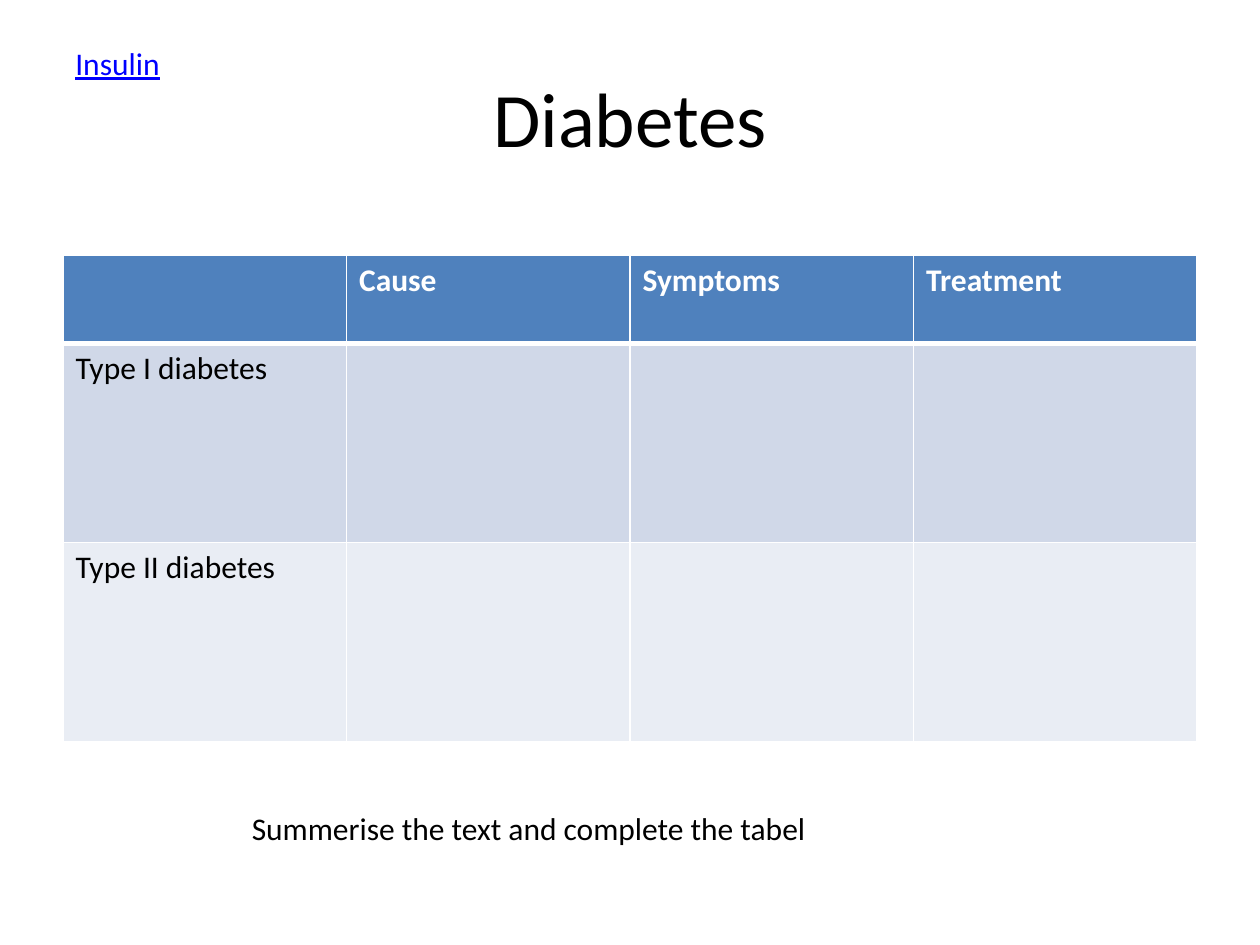
from pptx import Presentation as Deck
from pptx.dml.color import RGBColor as Rgb
from pptx.enum.text import MSO_ANCHOR as Anchor, PP_ALIGN as Align
from pptx.oxml import parse_xml
from pptx.oxml.ns import nsdecls
from pptx.util import Inches, Pt

WIDE, HIGH = Inches(10), Inches(7.5)
EDGE, SPAN = 0.05, 0.9
INK = {"text": "000000", "link": "0000FF", "line": "FFFFFF",
       "head": "4F81BD", "odd": "D0D8E8", "even": "E9EDF4"}
ROWS = [("head", 0.7, ["", "Cause", "Symptoms", "Treatment"]),
        ("odd", 1.58, ["Type I diabetes", "", "", ""]),
        ("even", 1.58, ["Type II diabetes", "", "", ""])]


def area(left, top, width, height):
    """Turn shares of the slide into lengths."""
    return (int(left * WIDE), int(top * HIGH),
            int(width * WIDE), int(height * HIGH))


def write(frame, text, size=18, ink="text", bold=False, line=False):
    """Add one styled run to the first paragraph."""
    run = frame.paragraphs[0].add_run()
    run.text = text
    font = run.font
    font.name, font.size = "Calibri", Pt(size)
    font.bold, font.underline = bold, line
    font.color.rgb = Rgb.from_string(INK[ink])


def add_title(slide, text):
    """Place the slide title."""
    title = slide.shapes.title
    title.left, title.top, title.width, title.height = area(
        EDGE, 0.04, SPAN, 1 / 6)
    frame = title.text_frame
    frame.vertical_anchor = Anchor.MIDDLE
    frame.paragraphs[0].alignment = Align.CENTER
    write(frame, text, 44)


def add_note(slide, text, box, wrap=True, **style):
    """Add a one-line text box."""
    frame = slide.shapes.add_textbox(*area(*box)).text_frame
    frame.word_wrap = wrap
    write(frame, text, **style)


def edge(cell, top, base):
    """Draw the four borders of a cell."""
    sides = {"L": 1, "R": 1, "T": top, "B": base}
    for spot, (side, width) in enumerate(sides.items()):
        rule = parse_xml(
            f'<a:ln{side} {nsdecls("a")} w="{Pt(width)}"><a:solidFill>'
            f'<a:srgbClr val="{INK["line"]}"/></a:solidFill></a:ln{side}>')
        cell._tc.get_or_add_tcPr().insert(spot, rule)


def add_grid(slide):
    """Add the table to fill in."""
    count = len(ROWS[0][2])
    tall = sum(high for _, high, _ in ROWS) / 7.5
    grid = slide.shapes.add_table(
        len(ROWS), count, *area(EDGE, 0.27, SPAN, tall)).table
    for r, (kind, high, texts) in enumerate(ROWS):
        grid.rows[r].height = Inches(high)
        for c, text in enumerate(texts):
            cell = grid.cell(r, c)
            cell.fill.solid()
            cell.fill.fore_color.rgb = Rgb.from_string(INK[kind])
            edge(cell, 3 if r == 1 else 1, 3 if r == 0 else 1)
            if text:
                head = kind == "head"
                write(cell.text_frame, text, bold=head,
                      ink="line" if head else "text")


def main():
    """Build and save the slide."""
    deck = Deck()
    deck.slide_width, deck.slide_height = WIDE, HIGH
    slide = deck.slides.add_slide(deck.slide_layouts[5])
    add_title(slide, "Diabetes")
    add_grid(slide)
    add_note(slide, "Insulin", (EDGE, 0.04, 0.5, 0.05),
             ink="link", line=True)
    add_note(slide, "Summerise the text and complete the tabel",
             (0.19, 0.85, 0.55, 0.05), wrap=False)
    deck.save("out.pptx")


if __name__ == "__main__":
    main()
